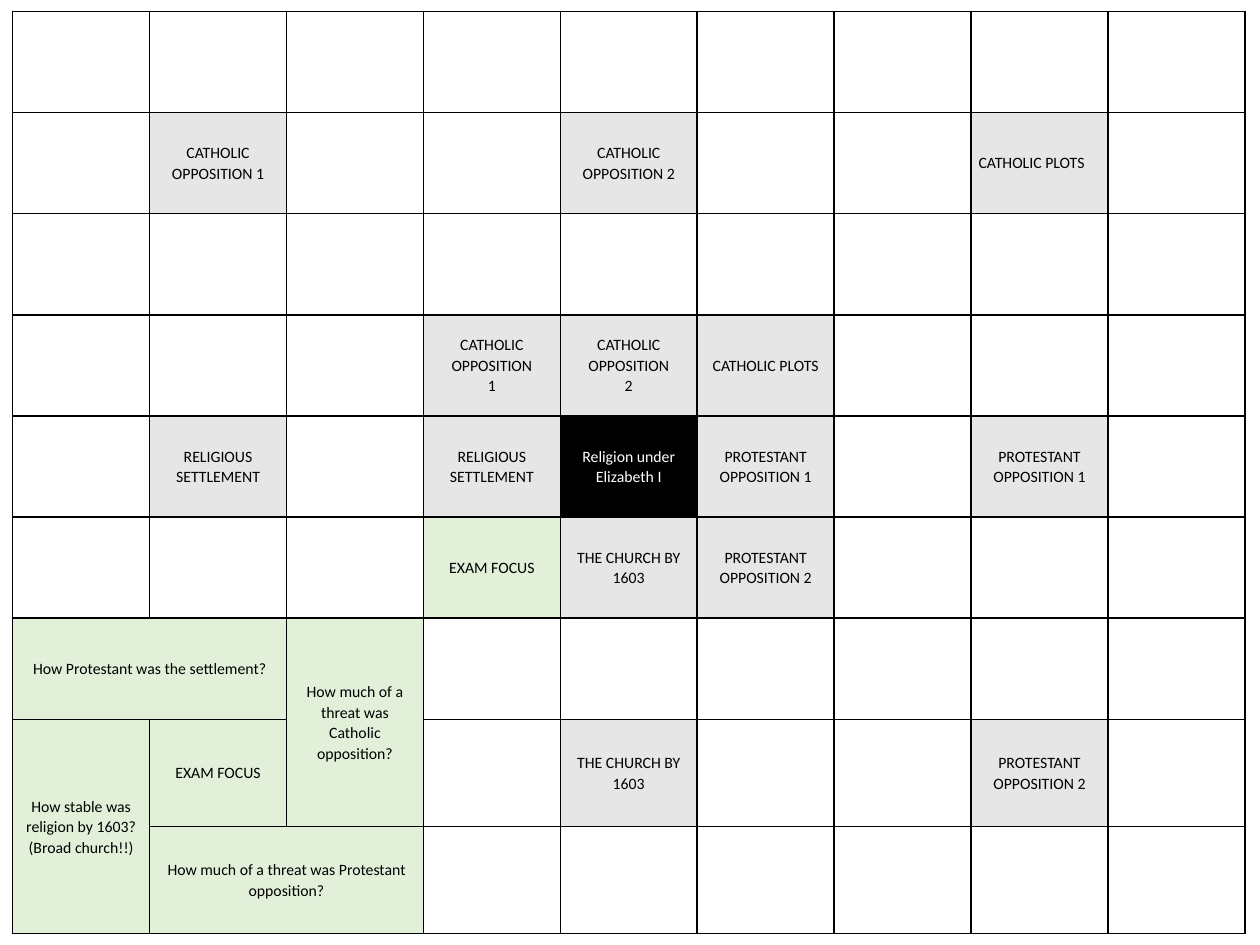
"""Build a revision grid on religion under Elizabeth I."""
from dataclasses import dataclass

import lxml.etree
import pptx
import pptx.dml.color
import pptx.enum.text
import pptx.oxml.ns
import pptx.util

Inches = pptx.util.Inches
ALIGN = pptx.enum.text.PP_ALIGN


@dataclass(frozen=True)
class Theme:
    """Colours, font and type sizes of the grid."""
    font: str = "Calibri"
    size: float = 9
    ink: str = "000000"
    light: str = "FFFFFF"
    topic: str = "E7E6E6"
    exam: str = "E2F0D9"
    border: float = 1
    spacing: float = 1.07


THEME = Theme()
COLUMN_WIDTHS = [9.78 / 9] * 9
ROW_HEIGHTS = [0.803] * 7 + [0.85] * 2

TOPICS = {
    (1, 1): "CATHOLIC OPPOSITION 1",
    (1, 4): "CATHOLIC OPPOSITION 2",
    (1, 7): "CATHOLIC PLOTS",
    (3, 3): "CATHOLIC OPPOSITION\n1",
    (3, 4): "CATHOLIC OPPOSITION\n2",
    (3, 5): "CATHOLIC PLOTS",
    (4, 1): "RELIGIOUS SETTLEMENT",
    (4, 3): "RELIGIOUS SETTLEMENT",
    (4, 5): "PROTESTANT OPPOSITION 1",
    (4, 7): "PROTESTANT OPPOSITION 1",
    (5, 4): "THE CHURCH BY 1603",
    (5, 5): "PROTESTANT OPPOSITION 2",
    (7, 4): "THE CHURCH BY 1603",
    (7, 7): "PROTESTANT OPPOSITION 2",
}
EXAM_QUESTIONS = {
    (5, 3): "EXAM FOCUS",
    (6, 0): "How Protestant was the settlement?",
    (6, 2): "How much of a threat was Catholic opposition?",
    (7, 0): "How stable was religion by 1603?\v(Broad church!!)",
    (7, 1): "EXAM FOCUS",
    (8, 1): "How much of a threat was Protestant opposition?",
}
THEME_TITLE = {(4, 4): "Religion under Elizabeth I"}
MERGES = [((6, 0), (6, 1)), ((6, 2), (7, 2)), ((7, 0), (8, 0)), ((8, 1), (8, 2))]
LEFT_ALIGNED = (1, 7)


def apply_format(target, values):
    """Set each named attribute on the target."""
    for attribute, value in values.items():
        setattr(target, attribute, value)


def rule_cell(cell):
    """Draw solid borders on all four sides of a cell."""
    properties = cell._tc.get_or_add_tcPr()
    qn = pptx.oxml.ns.qn
    for side in ("a:lnL", "a:lnR", "a:lnT", "a:lnB"):
        line = lxml.etree.SubElement(
            properties, qn(side), w=str(int(pptx.util.Pt(THEME.border))))
        fill = lxml.etree.SubElement(line, qn("a:solidFill"))
        lxml.etree.SubElement(fill, qn("a:srgbClr"), val=THEME.ink)


def add_grid(slide):
    """Add the ruled, merged and still empty grid."""
    grid = slide.shapes.add_table(
        len(ROW_HEIGHTS), len(COLUMN_WIDTHS), Inches(0.1), Inches(0.09),
        Inches(sum(COLUMN_WIDTHS)), Inches(sum(ROW_HEIGHTS))).table
    apply_format(grid, {"first_row": False, "horz_banding": False})
    for column, width in zip(grid.columns, COLUMN_WIDTHS):
        column.width = Inches(width)
    for row, height in zip(grid.rows, ROW_HEIGHTS):
        row.height = Inches(height)
    for cell in grid.iter_cells():
        rule_cell(cell)
        cell.fill.background()
    for first, last in MERGES:
        grid.cell(*first).merge(grid.cell(*last))
    return grid


def write_cells(grid, entries, background, ink):
    """Fill and label the cells of one category."""
    for position, label in entries.items():
        cell = grid.cell(*position)
        cell.fill.solid()
        cell.fill.fore_color.rgb = pptx.dml.color.RGBColor.from_string(background)
        apply_format(cell, {
            "vertical_anchor": pptx.enum.text.MSO_ANCHOR.MIDDLE,
            "margin_left": Inches(0.06), "margin_right": Inches(0.06),
            "margin_top": 0, "margin_bottom": 0})
        cell.text_frame.text = label
        for paragraph in cell.text_frame.paragraphs:
            if position == LEFT_ALIGNED:
                paragraph.alignment = ALIGN.LEFT
            else:
                apply_format(paragraph, {
                    "alignment": ALIGN.CENTER, "line_spacing": THEME.spacing})
            for run in paragraph.runs:
                apply_format(run.font, {
                    "name": THEME.font, "size": pptx.util.Pt(THEME.size)})
                run.font.color.rgb = pptx.dml.color.RGBColor.from_string(ink)


def main():
    """Build and save the slide."""
    deck = pptx.Presentation()
    apply_format(deck, {"slide_width": Inches(10), "slide_height": Inches(7.5)})
    slide = deck.slides.add_slide(deck.slide_layouts[6])
    grid = add_grid(slide)
    write_cells(grid, TOPICS, THEME.topic, THEME.ink)
    write_cells(grid, EXAM_QUESTIONS, THEME.exam, THEME.ink)
    write_cells(grid, THEME_TITLE, THEME.ink, THEME.light)
    deck.save("out.pptx")


if __name__ == "__main__":
    main()
